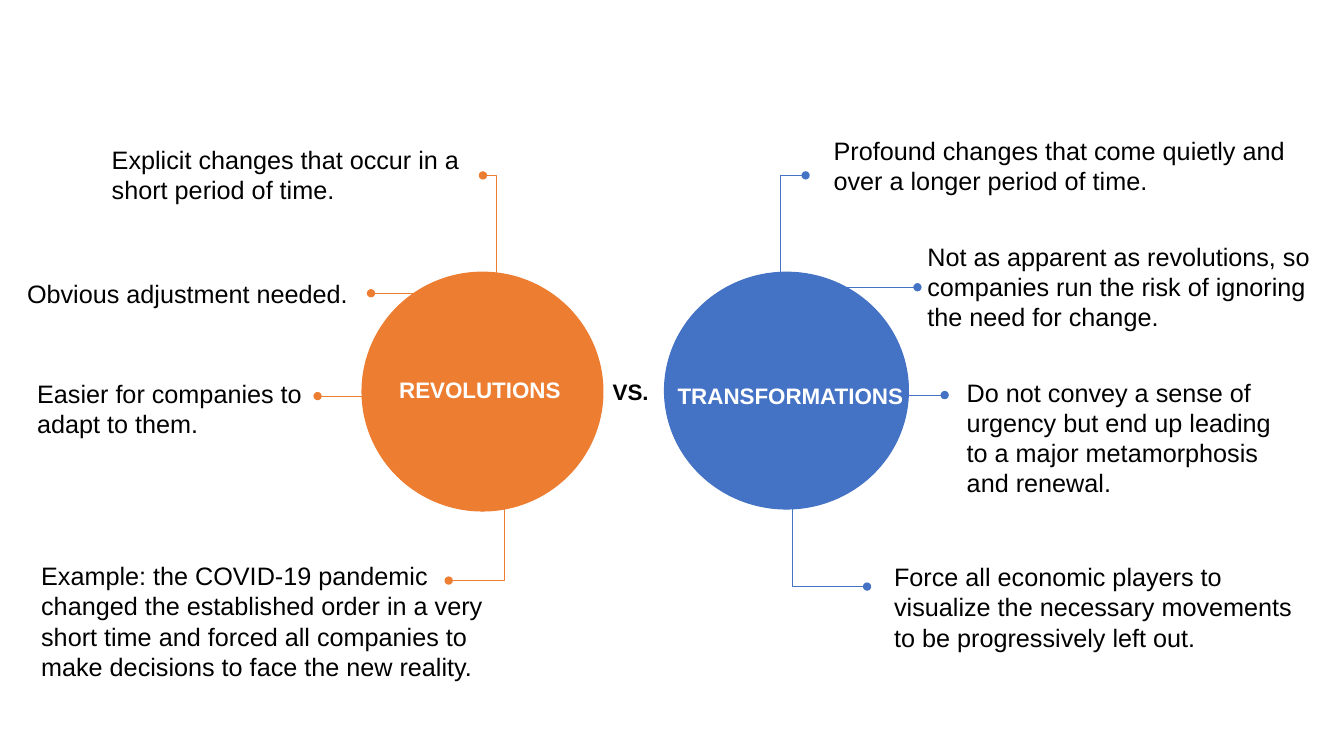
from lxml import etree
from pptx import Presentation
from pptx.dml.color import RGBColor
from pptx.enum.shapes import MSO_CONNECTOR, MSO_SHAPE
from pptx.enum.text import MSO_ANCHOR, MSO_AUTO_SIZE, PP_ALIGN
from pptx.oxml.ns import qn
from pptx.util import Inches, Pt

ELBOW = MSO_CONNECTOR.ELBOW
OVAL = MSO_SHAPE.OVAL
MIDDLE = MSO_ANCHOR.MIDDLE
CENTER = PP_ALIGN.CENTER
GROW = MSO_AUTO_SIZE.SHAPE_TO_FIT_TEXT

ORANGE, BLUE, BLACK, WHITE = "ED7D31", "4472C4", "000000", "FFFFFF"

# Leaders: dot, far end, and whether the line turns only once.
# Notes: left, top, width, height, text.
REVOLUTIONS = {
    "title": "REVOLUTIONS",
    "color": ORANGE,
    "circle": (3.59, 2.7, 2.39, 2.37),
    "label": (3.54, 3.51, 2.44, 0.71),
    "leaders": [
        ((4.79, 1.74), (4.92, 4.52), True),
        ((3.68, 2.91), (4.65, 3.78), False),
        ((3.15, 3.93), (4.49, 3.92), False),
        ((4.45, 5.76), (5, 3.89), True),
    ],
    "notes": [
        (1.01, 1.38, 4.12, 0.71, "Explicit changes that occur in a short period of time."),
        (0.17, 2.71, 3.56, 0.4, "Obvious adjustment needed."),
        (0.27, 3.7, 3.33, 0.71, "Easier for companies to adapt to them."),
        (0.31, 5.51, 4.62, 1.31,
         "Example: the COVID-19 pandemic changed the established order in a very "
         "short time and forced all companies to make decisions to face the new reality."),
    ],
}
TRANSFORMATIONS = {
    "title": "TRANSFORMATIONS",
    "color": BLUE,
    "circle": (6.59, 2.7, 2.42, 2.35),
    "label": (6.61, 3.31, 2.46, 1.22),
    "leaders": [
        ((7.99, 1.74), (7.74, 3.28), True),
        ((9.1, 2.85), (8.26, 4.32), True),
        ((9.37, 3.92), (8.17, 3.89), False),
        ((8.6, 5.82), (7.12, 4.01), False),
    ],
    "notes": [
        (8.17, 1.29, 4.74, 0.71,
         "Profound changes that come quietly and over a longer period of time."),
        (9.1, 2.34, 4.23, 1.01,
         "Not as apparent as revolutions, so companies run the risk of ignoring "
         "the need for change."),
        (9.49, 3.69, 3.46, 1.31,
         "Do not convey a sense of urgency but end up leading to a major "
         "metamorphosis and renewal."),
        (8.77, 5.52, 4.23, 1.01,
         "Force all economic players to visualize the necessary movements to be "
         "progressively left out."),
    ],
}


def rgb(color):
    return RGBColor.from_string(color)


def inches(values):
    return [Inches(value) for value in values]


def add_text(slide, box, text, size, color, bold=False):
    holder = slide.shapes.add_textbox(*inches(box))
    frame = holder.text_frame
    frame.word_wrap = True
    run = frame.paragraphs[0].add_run()
    run.text = text
    run.font.name = "Arial"
    run.font.size = Pt(size)
    run.font.bold = bold
    run.font.color.rgb = rgb(color)
    return frame


def add_note(slide, box, text):
    add_text(slide, box, text, 18, BLACK).auto_size = GROW


def add_label(slide, box, text, color):
    """Bold text centred in its box."""
    frame = add_text(slide, box, text, 16, color, bold=True)
    frame.vertical_anchor = MIDDLE
    frame.margin_left = frame.margin_right = Inches(0.1)
    frame.margin_top = frame.margin_bottom = Inches(0.1)
    frame.paragraphs[0].alignment = CENTER


def add_leader(slide, dot, end, single_turn, color):
    """Elbow line that starts with a round dot."""
    leader = slide.shapes.add_connector(ELBOW, *inches(dot + end))
    leader.line.color.rgb = rgb(color)
    leader.line.width = Pt(0.5)
    properties = leader._element.spPr
    if single_turn:
        properties.find(qn("a:prstGeom")).set("prst", "bentConnector2")
    etree.SubElement(properties.find(qn("a:ln")), qn("a:headEnd"), type="oval")
    etree.SubElement(properties, qn("a:effectLst"))


def add_circle(slide, box, color):
    circle = slide.shapes.add_shape(OVAL, *inches(box))
    circle.shadow.inherit = False
    circle.fill.solid()
    circle.fill.fore_color.rgb = rgb(color)
    circle.line.color.rgb = rgb(color)
    circle.line.width = Pt(0.75)


def add_side(slide, side):
    """One concept: leaders behind its circle, then the label and notes."""
    for dot, end, single_turn in side["leaders"]:
        add_leader(slide, dot, end, single_turn, side["color"])
    add_circle(slide, side["circle"], side["color"])
    add_label(slide, side["label"], side["title"], WHITE)
    for *box, text in side["notes"]:
        add_note(slide, box, text)


def main():
    deck = Presentation()
    deck.slide_width, deck.slide_height = inches((13.33, 7.5))
    slide = deck.slides.add_slide(deck.slide_layouts[6])
    for side in (REVOLUTIONS, TRANSFORMATIONS):
        add_side(slide, side)
    add_label(slide, (5.13, 3.33, 2.25, 1.1), "VS.", BLACK)
    deck.save("out.pptx")


if __name__ == "__main__":
    main()
